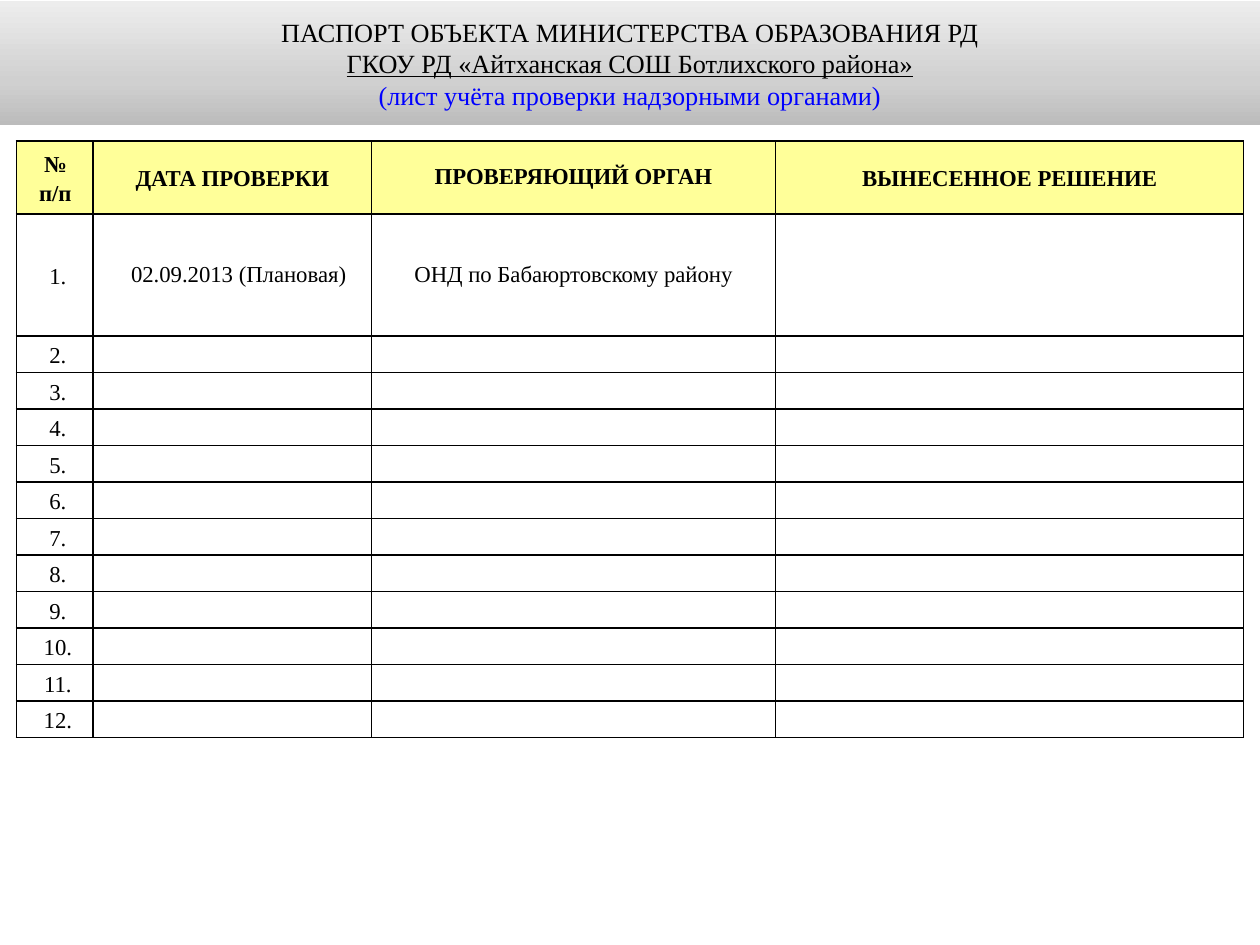
from lxml.etree import SubElement
from pptx import Presentation
from pptx.dml.color import RGBColor
from pptx.enum.shapes import MSO_SHAPE
from pptx.enum.text import MSO_ANCHOR, PP_ALIGN
from pptx.oxml import parse_xml
from pptx.oxml.ns import nsdecls, qn
from pptx.util import Inches, Pt

FONT = "Times New Roman"
BLACK = RGBColor(0x00, 0x00, 0x00)
BLUE = RGBColor(0x00, 0x00, 0xFF)
WHITE = RGBColor(0xFF, 0xFF, 0xFF)
YELLOW = RGBColor(0xFF, 0xFF, 0x99)
BANNER_STOPS = [
    (0, RGBColor(0xBC, 0xBC, 0xBC)),
    (35, RGBColor(0xD0, 0xD0, 0xD0)),
    (100, RGBColor(0xED, 0xED, 0xED)),
]

TITLE_LINES = [
    ("ПАСПОРТ ОБЪЕКТА МИНИСТЕРСТВА ОБРАЗОВАНИЯ РД", BLACK, False),
    ("ГКОУ РД «Айтханская СОШ Ботлихского района»", BLACK, True),
    ("(лист учёта проверки надзорными органами)", BLUE, False),
]
HEADERS = ["№\nп/п", "ДАТА ПРОВЕРКИ", "ПРОВЕРЯЮЩИЙ ОРГАН", "ВЫНЕСЕННОЕ РЕШЕНИЕ"]
INSPECTIONS = [["02.09.2013 (Плановая)", "ОНД по Бабаюртовскому району", ""]]
ENTRY_COUNT = 12
COLUMN_WIDTHS = [0.61, 2.21, 3.21, 3.72]
HEADER_HEIGHT, FILLED_HEIGHT, EMPTY_HEIGHT = 0.58, 0.97, 0.29
EXACT_SPACING = Pt(14)
TEXT_SIZE = Pt(13)


def format_paragraph(paragraph, size, color=BLACK, bold=False, underline=False):
    paragraph.alignment = PP_ALIGN.CENTER
    for run in paragraph.runs:
        font = run.font
        font.name, font.size = FONT, size
        font.bold, font.underline = bold, underline
        font.color.rgb = color


def fill_gradient(shape, stops):
    """Fill a shape with a gradient that runs from bottom to top."""
    shape.fill.gradient()
    shape.fill.gradient_angle = 90
    stop_list = shape.element.spPr.find(qn("a:gradFill")).find(qn("a:gsLst"))
    for stop in list(stop_list):
        stop_list.remove(stop)
    for percent, color in stops:
        stop = SubElement(stop_list, qn("a:gs"), pos=str(percent * 1000))
        SubElement(stop, qn("a:srgbClr"), val=str(color))


def add_banner(slide, left, top, width, height):
    banner = slide.shapes.add_shape(MSO_SHAPE.RECTANGLE, left, top, width, height)
    banner.shadow.inherit = False
    banner.line.fill.background()
    fill_gradient(banner, BANNER_STOPS)
    text_frame = banner.text_frame
    text_frame.word_wrap = True
    text_frame.vertical_anchor = MSO_ANCHOR.MIDDLE
    text_frame.text = "\n".join(text for text, _, _ in TITLE_LINES)
    for paragraph, (_, color, underline) in zip(text_frame.paragraphs, TITLE_LINES):
        format_paragraph(paragraph, Pt(15), color, underline=underline)


def add_borders(cell):
    properties = cell._tc.get_or_add_tcPr()
    for index, side in enumerate(("lnL", "lnR", "lnT", "lnB")):
        properties.insert(index, parse_xml(
            f'<a:{side} {nsdecls("a")} w="{Pt(1)}"><a:solidFill>'
            f'<a:srgbClr val="{BLACK}"/></a:solidFill></a:{side}>'))


def format_cell(cell, text, fill, bold, indent, spacing):
    cell.fill.solid()
    cell.fill.fore_color.rgb = fill
    cell.vertical_anchor = MSO_ANCHOR.MIDDLE
    cell.margin_left = cell.margin_right = Inches(0.03)
    cell.margin_top = cell.margin_bottom = 0
    cell.text_frame.text = text
    for paragraph in cell.text_frame.paragraphs:
        format_paragraph(paragraph, TEXT_SIZE, bold=bold)
        paragraph.line_spacing = spacing
        paragraph._p.get_or_add_pPr().set("marL", str(Inches(indent)))
        if not text:  # keeps an empty row from growing
            SubElement(paragraph._p, qn("a:endParaRPr"), sz=str(int(TEXT_SIZE.pt * 100)))
    add_borders(cell)


def add_inspection_table(slide, left, top, width):
    empty_rows = ENTRY_COUNT - len(INSPECTIONS)
    heights = ([HEADER_HEIGHT] + [FILLED_HEIGHT] * len(INSPECTIONS)
               + [EMPTY_HEIGHT] * empty_rows)
    entries = INSPECTIONS + [[""] * 3] * empty_rows
    rows = [HEADERS] + [[f"{number}."] + entry for number, entry in enumerate(entries, 1)]

    table = slide.shapes.add_table(
        len(rows), len(HEADERS), left, top, width, Inches(sum(heights))).table
    for column, share in zip(table.columns, COLUMN_WIDTHS):
        column.width = int(width * share / sum(COLUMN_WIDTHS))
    for row, height in zip(table.rows, heights):
        row.height = Inches(height)

    for row_index, texts in enumerate(rows):
        is_header = row_index == 0
        # Number and date entries sit slightly right of centre
        indents = [0.01, 0, 0, 0] if is_header else [0.05, 0.1, 0, 0]
        for column_index, text in enumerate(texts):
            exact = column_index == 2 or (column_index == 1 and not is_header)
            format_cell(table.cell(row_index, column_index), text,
                        YELLOW if is_header else WHITE, is_header,
                        indents[column_index], EXACT_SPACING if exact else 1.15)


def main():
    presentation = Presentation()
    presentation.slide_width, presentation.slide_height = Inches(10), Inches(7.5)
    slide = presentation.slides.add_slide(presentation.slide_layouts[6])
    width, height = presentation.slide_width, presentation.slide_height

    margin = int(width * 0.013)
    add_inspection_table(slide, margin, int(height * 0.149), width - 2 * margin)
    add_banner(slide, 0, Inches(0.01), width, int(height * 0.131))
    presentation.save("out.pptx")


if __name__ == "__main__":
    main()
